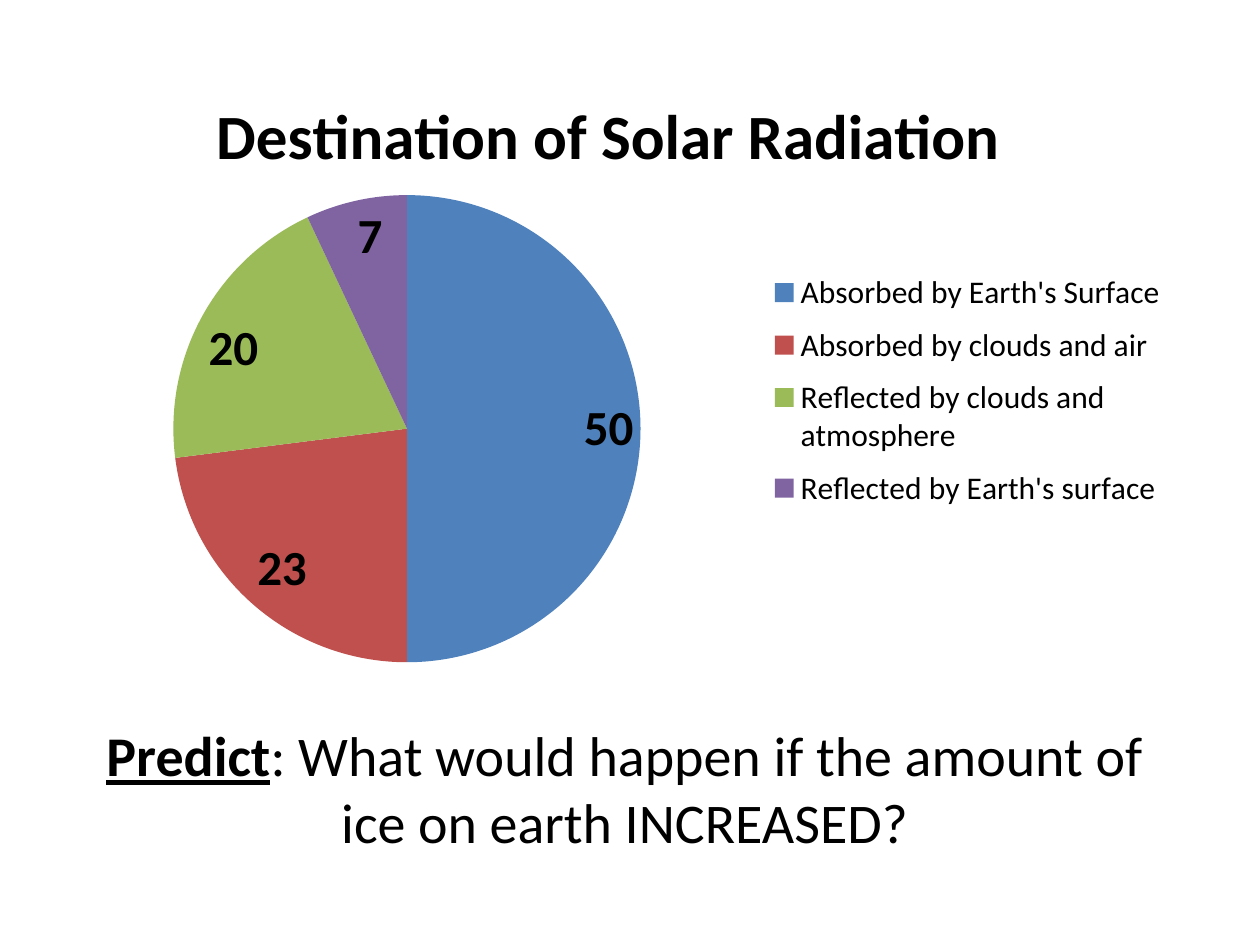
from dataclasses import dataclass

from lxml.etree import SubElement
from pptx import Presentation
from pptx.chart.data import CategoryChartData as Data
from pptx.dml.color import RGBColor as Rgb
from pptx.enum.chart import XL_CHART_TYPE as Kind
from pptx.enum.chart import XL_LABEL_POSITION as Spot
from pptx.enum.chart import XL_LEGEND_POSITION as Side
from pptx.enum.text import MSO_AUTO_SIZE as Fit
from pptx.enum.text import PP_ALIGN as Align
from pptx.oxml.ns import qn
from pptx.util import Inches, Pt


@dataclass(frozen=True)
class Theme:
    font: str = "Calibri"
    ink: str = "000000"
    hues: tuple = ("4F81BD", "C0504D", "9BBB59", "8064A2")
    head: int = 36
    body: int = 32
    label: int = 28
    key: int = 18


class Deck:
    """Holds the theme and the current slide, and draws each kind of element."""

    def __init__(self, theme):
        self.theme = theme
        self.file = Presentation()
        self.file.slide_width, self.file.slide_height = Inches(10), Inches(7.5)
        self.slide = self.file.slides.add_slide(self.file.slide_layouts[6])

    def style(self, font, size, bold=False):
        font.name, font.size, font.bold = self.theme.font, Pt(size), bold
        font.color.rgb = Rgb.from_string(self.theme.ink)

    def place(self, node, index, **box):
        for old in node.findall(qn("c:layout")):
            node.remove(old)
        layout = SubElement(node, qn("c:layout"))
        node.insert(index, layout)
        manual = SubElement(layout, qn("c:manualLayout"))
        if node.tag == qn("c:plotArea"):
            SubElement(manual, qn("c:layoutTarget")).set("val", "inner")
        for axis in "xy":
            SubElement(manual, qn(f"c:{axis}Mode")).set("val", "edge")
        for name, value in box.items():
            SubElement(manual, qn(f"c:{name}")).set("val", str(value))

    def pie(self, box, title, shares):
        data = Data()
        data.categories = list(shares)
        data.add_series("Series 1", list(shares.values()))
        area = map(Inches, box)
        chart = self.slide.shapes.add_chart(Kind.PIE, *area, data).chart
        self.style(chart.font, self.theme.key)

        chart.has_title = True
        frame = chart.chart_title.text_frame
        frame.text = title
        self.style(frame.paragraphs[0].runs[0].font, self.theme.head, True)
        self.place(chart.chart_title._element, 1, x=0.15, y=0.06)

        chart.has_legend = True
        legend = chart.legend
        legend.position, legend.include_in_layout = Side.RIGHT, False
        self.style(legend.font, self.theme.key)
        self.place(legend._element, 1, x=0.63, y=0.34, w=0.36, h=0.41)

        plot = chart.plots[0]
        plot.vary_by_categories = True
        self.place(plot._element.getparent(), 0, x=0.12, y=0.24, w=0.41, h=0.73)
        series = plot.series[0]
        for i, color in enumerate(self.theme.hues):
            fill = series.points[i].format.fill
            fill.solid()
            fill.fore_color.rgb = Rgb.from_string(color)
        labels = series.data_labels
        labels.show_value, labels.position = True, Spot.INSIDE_END
        self.style(labels.font, self.theme.label, True)

    def prompt(self, box, lead, rest):
        frame = self.slide.shapes.add_textbox(*map(Inches, box)).text_frame
        frame.word_wrap, frame.auto_size = True, Fit.SHAPE_TO_FIT_TEXT
        para = frame.paragraphs[0]
        para.alignment = Align.CENTER
        for text, strong in ((lead, True), (rest, False)):
            run = para.add_run()
            run.text = text
            self.style(run.font, self.theme.body, strong)
            run.font.underline = strong


def main():
    deck = Deck(Theme())
    shares = {
        "Absorbed by Earth's Surface": 50,
        "Absorbed by clouds and air": 23,
        "Reflected by clouds and atmosphere": 20,
        "Reflected by Earth's surface": 7,
    }
    deck.pie((0.25, 0.33, 9.17, 5.08), "Destination of Solar Radiation", shares)
    deck.prompt(
        (0.5, 5.67, 8.92, 1.18),
        "Predict",
        ": What would happen if the amount of ice on earth INCREASED?",
    )
    deck.file.save("out.pptx")


if __name__ == "__main__":
    main()
